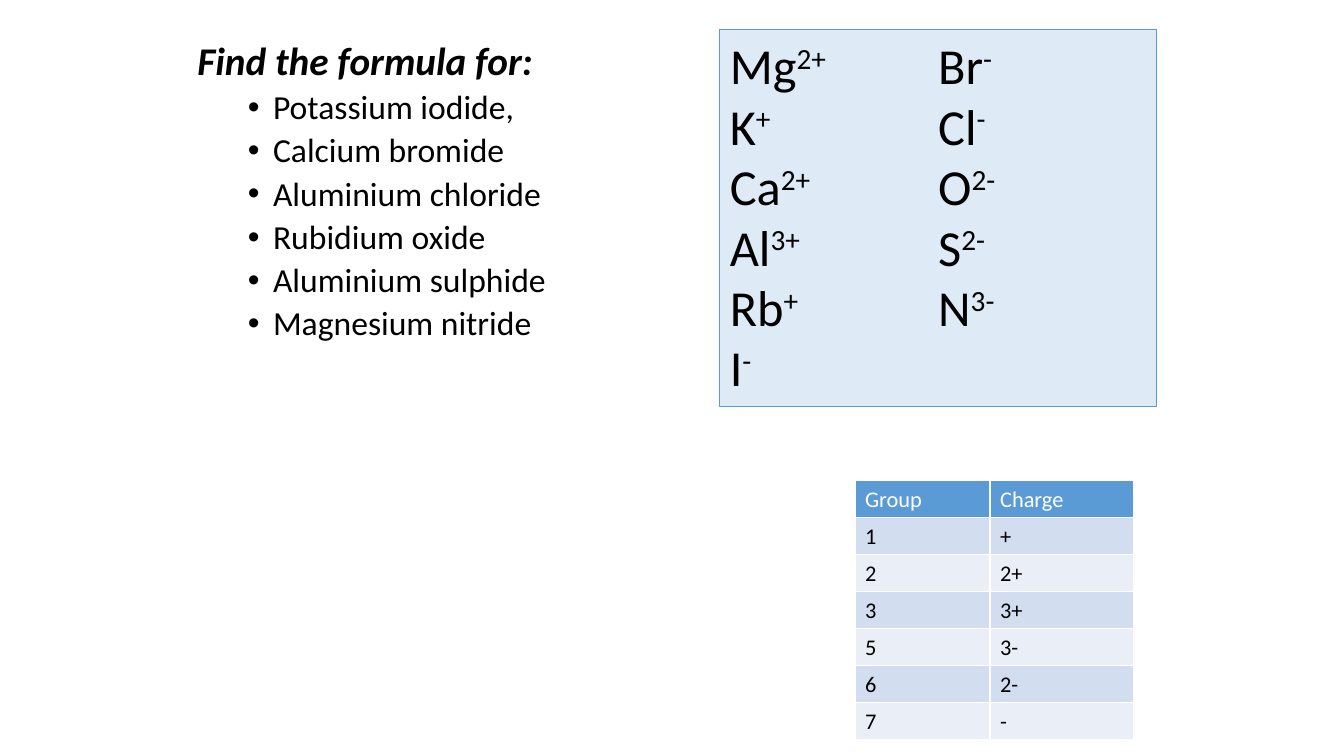
from lxml import etree
from pptx import Presentation
from pptx.dml.color import RGBColor
from pptx.enum.shapes import MSO_SHAPE
from pptx.enum.text import MSO_ANCHOR, MSO_AUTO_SIZE, PP_ALIGN
from pptx.oxml.ns import qn
from pptx.util import Pt

PX = 9144  # 100 px to the inch
RECT = MSO_SHAPE.RECTANGLE
TOP, LEFT = MSO_ANCHOR.TOP, PP_ALIGN.LEFT
GROW = MSO_AUTO_SIZE.SHAPE_TO_FIT_TEXT
HEX = {"black": "000000", "white": "FFFFFF", "blue": "5B9BD5",
       "pale": "DEEBF7", "odd": "D2DEEF", "even": "EAEFF7"}
COLOR = {name: RGBColor.from_string(code) for name, code in HEX.items()}

SALTS = ["Potassium iodide,", "Calcium bromide", "Aluminium chloride",
         "Rubidium oxide", "Aluminium sulphide", "Magnesium nitride"]
IONS = [("Mg", "2+"), ("K", "+"), ("Ca", "2+"), ("Al", "3+"), ("Rb", "+"), ("I", "-"),
        ("Br", "-"), ("Cl", "-"), ("O", "2-"), ("S", "2-"), ("N", "3-")]
ROWS = [("Group", "Charge"), ("1", "+"), ("2", "2+"), ("3", "3+"),
        ("5", "3-"), ("6", "2-"), ("7", "-")]


def style(para, size, color="black", bold=False, italic=False):
    font = para.font
    font.name, font.size = "Calibri", Pt(size)
    font.bold, font.italic = bold, italic
    font.color.rgb = COLOR[color]


def edge(cell):
    """Give the cell a thin white border; call before its fill is set."""
    props = cell._tc.get_or_add_tcPr()
    for side in ("lnL", "lnR", "lnT", "lnB"):
        line = etree.SubElement(props, qn("a:" + side), w=str(Pt(1)))
        fill = etree.SubElement(line, qn("a:solidFill"))
        etree.SubElement(fill, qn("a:srgbClr"), val=HEX["white"])


prs = Presentation()
prs.slide_width, prs.slide_height = 1333 * PX, 750 * PX
slide = prs.slides.add_slide(prs.slide_layouts[6])
shapes = slide.shapes

# Task list
task = shapes.add_textbox(186 * PX, 36 * PX, 900 * PX, 495 * PX).text_frame
task.word_wrap = True
for i, text in enumerate(["Find the formula for:"] + SALTS):
    head = i == 0
    para = task.paragraphs[0] if head else task.add_paragraph()
    para.text = text
    para.line_spacing = 0.9
    para.space_before = Pt(10 if head else 5)
    style(para, 28 if head else 24, bold=head, italic=head)
    props = para._p.get_or_add_pPr()
    props.set("marL", str((25 if head else 75) * PX))
    props.set("indent", str(-25 * PX))
    if not head:
        para.level = 1
        mark = etree.Element(qn("a:buChar"), char="•")
        face = etree.Element(qn("a:buFont"), typeface="Arial")
        props.find(qn("a:defRPr")).addprevious(face)
        face.addnext(mark)

# Ion box
box = shapes.add_shape(RECT, 714 * PX, 29 * PX, 433 * PX, 374 * PX)
box.shadow.inherit = False
box.fill.solid()
box.fill.fore_color.rgb = COLOR["pale"]
box.line.color.rgb = COLOR["blue"]
box.line.width = Pt(0.75)
frame = box.text_frame
frame.word_wrap = True
frame.auto_size = GROW
frame.vertical_anchor = TOP
frame._txBody.bodyPr.set("numCol", "2")
for i, (atom, charge) in enumerate(IONS):
    para = frame.add_paragraph() if i else frame.paragraphs[0]
    para.alignment = LEFT
    style(para, 36)
    para.add_run().text = atom
    power = para.add_run()
    power.text = charge
    power._r.get_or_add_rPr().set("baseline", "30000")

# Charge table
table = shapes.add_table(len(ROWS), 2, 848 * PX, 477 * PX, 276 * PX, 257 * PX).table
for col, width in zip(table.columns, (134, 142)):
    col.width = width * PX
for r, row in enumerate(ROWS):
    shade = "blue" if r == 0 else "odd" if r % 2 else "even"
    for c, text in enumerate(row):
        cell = table.cell(r, c)
        edge(cell)
        cell.fill.solid()
        cell.fill.fore_color.rgb = COLOR[shade]
        cell.text = text
        style(cell.text_frame.paragraphs[0], 16, "black" if r else "white")

prs.save("out.pptx")
